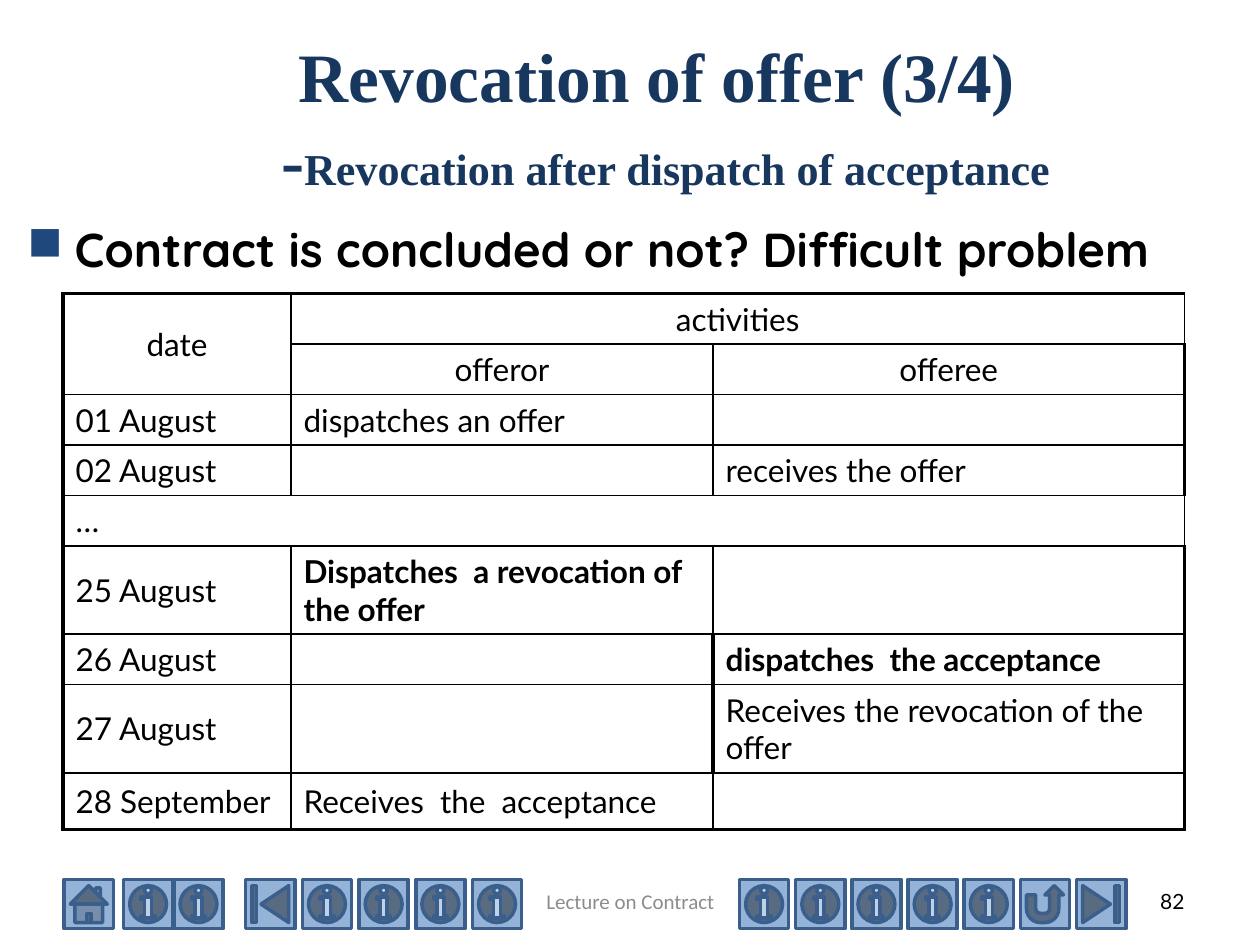
from dataclasses import dataclass

from lxml.etree import SubElement
from pptx import Presentation
from pptx.dml.color import RGBColor
from pptx.enum.shapes import MSO_SHAPE as Preset
from pptx.enum.text import MSO_ANCHOR as Anchor, PP_ALIGN as Align
from pptx.oxml.ns import qn
from pptx.util import Pt

COLORS = {
    "title": "17375E",
    "bullet": "1F497D",
    "text": "000000",
    "footer": "8C8C8C",
    "button": "95B3D7",
    "button_line": "3A5F8C",
}
TITLE_FONT = {"name": "Times New Roman", "bold": True, "color": "title"}
HEADING = {"name": "Quicksand", "size": Pt(27.2), "bold": True, "color": "text"}
CELL = {"name": "Lato", "size": Pt(18), "bold": False, "color": "text"}
CELL_BOLD = {**CELL, "bold": True}
NUMBER = {"name": "Lato", "size": Pt(12), "color": "text"}
FOOTER = {"name": "Calibri", "size": Pt(12), "color": "footer"}

THIN, THICK = 1, 2.25
BUTTON_TOP, BUTTON_SIZE = 502.6, 28.1


@dataclass
class ButtonRow:
    left: float
    step: float
    kinds: list


@dataclass
class Label:
    text: str
    left: float
    top: float
    width: float
    height: float
    font: dict
    align: Align = Align.LEFT
    anchor: Anchor = Anchor.MIDDLE


@dataclass
class Entry:
    row: int
    column: int
    text: str
    font: dict
    align: Align = Align.LEFT


INFO = Preset.ACTION_BUTTON_INFORMATION
BUTTON_ROWS = [
    ButtonRow(36.7, 0, [Preset.ACTION_BUTTON_HOME]),
    ButtonRow(70.6, 28.8, [INFO] * 2),
    ButtonRow(140.4, 32.4, [Preset.ACTION_BUTTON_BEGINNING] + [INFO] * 4),
    ButtonRow(422.6, 32.1, [INFO] * 5 + [Preset.ACTION_BUTTON_RETURN,
                                         Preset.ACTION_BUTTON_END]),
]
QUESTION = Label("Contract is concluded or not? Difficult problem",
                 8.6, 122.4, 702.7, 45.4, HEADING, anchor=Anchor.TOP)
FOOTERS = [
    Label("82", 516.2, 500.4, 167.8, 28.8, NUMBER, Align.RIGHT),
    Label("Lecture on Contract", 246.2, 500.4, 228.2, 28.8, FOOTER, Align.CENTER),
]
COLUMN_WIDTHS = [130.3, 241.2, 269.3]
ROW_HEIGHTS = [28.8] * 5 + [50.4, 28.8, 50.4, 32.4]
MERGES = [((0, 0), (1, 0)), ((0, 1), (0, 2)), ((4, 0), (4, 2))]
DATES = ["01 August", "02 August", "…", "25 August", "26 August",
         "27 August", "28 September"]
ENTRIES = [
    Entry(0, 0, "date", CELL, Align.CENTER),
    Entry(0, 1, "activities", CELL, Align.CENTER),
    Entry(1, 1, "offeror", CELL, Align.CENTER),
    Entry(1, 2, "offeree", CELL, Align.CENTER),
    *[Entry(row, 0, date, CELL) for row, date in enumerate(DATES, 2)],
    Entry(2, 1, "dispatches an offer", CELL),
    Entry(3, 2, "receives the offer", CELL),
    Entry(5, 1, "Dispatches  a revocation of the offer", CELL_BOLD),
    Entry(6, 2, "dispatches  the acceptance", CELL_BOLD),
    Entry(7, 2, "Receives the revocation of the offer", CELL),
    Entry(8, 1, "Receives  the  acceptance", CELL),
]
EMPHASIZED_ROWS = (6, 7)  # thick line left of the offeree column


def rgb(name: str) -> RGBColor:
    return RGBColor.from_string(COLORS[name])


def add_span(para, text: str, font: dict) -> None:
    span = para.add_run()
    span.text = text
    for key, value in font.items():
        if key == "color":
            span.font.color.rgb = rgb(value)
        else:
            setattr(span.font, key, value)


def add_title(page) -> None:
    title = page.shapes.title
    area = {"left": 90.7, "top": 16.6, "width": 569.5, "height": 100.1}
    for key, value in area.items():
        setattr(title, key, Pt(value))
    title.text_frame.vertical_anchor = Anchor.MIDDLE
    para = title.text_frame.paragraphs[0]
    para.alignment = Align.CENTER
    large = {**TITLE_FONT, "size": Pt(39.6)}
    add_span(para, "Revocation of offer (3/4)", large)
    para.add_line_break()
    add_span(para, " -", large)
    add_span(para, "Revocation after dispatch of acceptance",
             {**TITLE_FONT, "size": Pt(25.2)})


def add_label(page, label: Label):
    box = page.shapes.add_textbox(Pt(label.left), Pt(label.top),
                                  Pt(label.width), Pt(label.height))
    box.text_frame.word_wrap = True
    box.text_frame.vertical_anchor = label.anchor
    para = box.text_frame.paragraphs[0]
    para.alignment = label.align
    add_span(para, label.text, label.font)
    return para


def add_bullet(para, symbol: str, indent: float) -> None:
    properties = para._p.get_or_add_pPr()
    properties.set("marL", str(Pt(indent)))
    properties.set("indent", str(-Pt(indent)))
    color = SubElement(properties, qn("a:buClr"))
    SubElement(color, qn("a:srgbClr"), val=COLORS["bullet"])
    SubElement(properties, qn("a:buChar"), char=symbol)


def add_buttons(page, group: ButtonRow) -> None:
    for index, kind in enumerate(group.kinds):
        button = page.shapes.add_shape(
            kind, Pt(group.left + index * group.step), Pt(BUTTON_TOP),
            Pt(BUTTON_SIZE), Pt(BUTTON_SIZE))
        button.shadow.inherit = False
        button.fill.solid()
        button.fill.fore_color.rgb = rgb("button")
        button.line.color.rgb = rgb("button_line")
        button.line.width = Pt(2)


def set_borders(cell, widths: dict) -> None:
    properties = cell._tc.get_or_add_tcPr()
    for position, (side, width) in enumerate(widths.items()):
        line = SubElement(properties, qn(f"a:{side}"), w=str(Pt(width)))
        fill = SubElement(line, qn("a:solidFill"))
        SubElement(fill, qn("a:srgbClr"), val=COLORS["text"])
        properties.remove(line)
        properties.insert(position, line)  # borders precede the fill


def add_timeline(page) -> None:
    last_row, last_column = len(ROW_HEIGHTS) - 1, len(COLUMN_WIDTHS) - 1
    table = page.shapes.add_table(
        last_row + 1, last_column + 1, Pt(36), Pt(167.8),
        Pt(sum(COLUMN_WIDTHS)), Pt(sum(ROW_HEIGHTS))).table
    table.first_row = table.horz_banding = False
    for column, width in zip(table.columns, COLUMN_WIDTHS):
        column.width = Pt(width)
    for row, height in zip(table.rows, ROW_HEIGHTS):
        row.height = Pt(height)
    for first, last in MERGES:
        table.cell(*first).merge(table.cell(*last))

    # Thick frame, thin inner lines
    for row in range(last_row + 1):
        for column in range(last_column + 1):
            cell = table.cell(row, column)
            cell.fill.background()
            cell.vertical_anchor = Anchor.MIDDLE
            cell.text_frame.paragraphs[0].font.size = Pt(18)
            marked = row in EMPHASIZED_ROWS
            thick = {
                "lnL": column == 0 or (marked and column == 2),
                "lnR": column == last_column or (marked and column == 1),
                "lnT": row == 0,
                "lnB": row == last_row,
            }
            set_borders(cell, {side: THICK if on else THIN
                               for side, on in thick.items()})

    for entry in ENTRIES:
        para = table.cell(entry.row, entry.column).text_frame.paragraphs[0]
        para.alignment = entry.align
        add_span(para, entry.text, entry.font)


def main() -> None:
    deck = Presentation()
    deck.slide_width, deck.slide_height = Pt(720), Pt(540)
    page = deck.slides.add_slide(deck.slide_layouts[5])
    for group in BUTTON_ROWS:
        add_buttons(page, group)
    add_title(page)
    add_bullet(add_label(page, QUESTION), "■", 27)
    add_timeline(page)
    for label in FOOTERS:
        add_label(page, label)
    deck.save("out.pptx")


if __name__ == "__main__":
    main()
